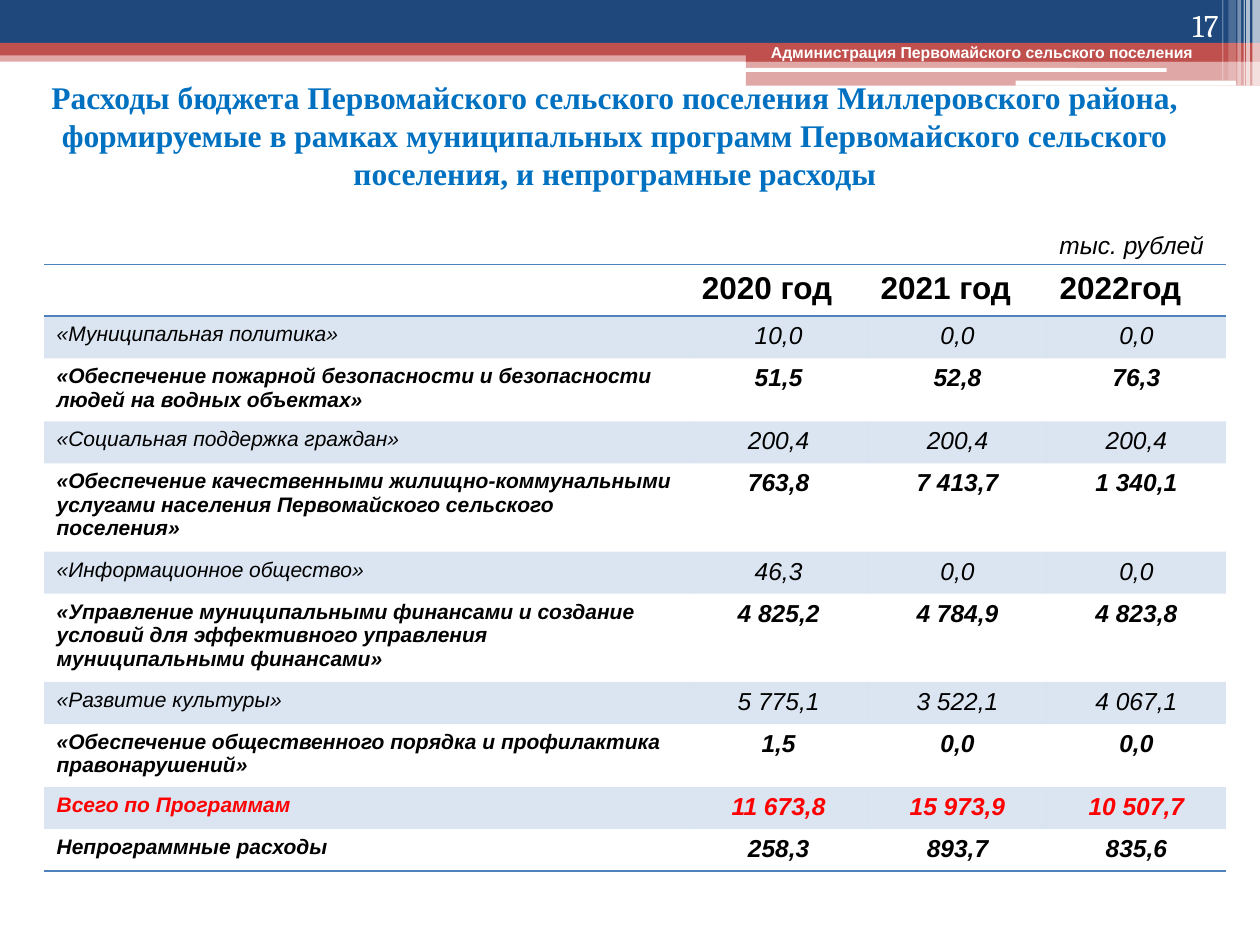
"""Build the budget expenditure slide with its programme table."""
from pptx import Presentation
from pptx.dml.color import RGBColor
from pptx.enum.shapes import MSO_SHAPE
from pptx.enum.text import MSO_ANCHOR, PP_ALIGN
from pptx.oxml import parse_xml
from pptx.oxml.ns import nsdecls, qn
from pptx.util import Inches, Pt

RECT, ROUND = MSO_SHAPE.RECTANGLE, MSO_SHAPE.ROUNDED_RECTANGLE
LEFT, CENTER, RIGHT = PP_ALIGN.LEFT, PP_ALIGN.CENTER, PP_ALIGN.RIGHT
TOP, BOTTOM = MSO_ANCHOR.TOP, MSO_ANCHOR.BOTTOM
NAVY, RED, BLUE, WHITE, BLACK = "1F497D", "C0504D", "4F81BD", "FFFFFF", "000000"
NO_STYLE = "{2D5ABB26-0587-4C30-8999-92F81FD0307C}"

TITLE = ("Расходы бюджета Первомайского сельского поселения Миллеровского района, "
         "формируемые в рамках муниципальных программ Первомайского сельского "
         "поселения, и непрограмные расходы")
BANDS = [
    (RECT, 0, 0.4, 10, 0.09, RED, 50),
    (RECT, 0, 0, 10, 0.34, NAVY, 100),
    (RECT, 0, 0.34, 10, 0.1, RED, 100),
    (RECT, 5.92, 0.39, 4.08, 0.1, RED, 100),
    (RECT, 5.92, 0.48, 4.08, 0.2, RED, 50),
    (ROUND, 5.91, 0.54, 3.35, 0.03, WHITE, 100),
    (ROUND, 8.06, 0.64, 1.75, 0.04, WHITE, 100),
    (RECT, 9.94, 0, 0.06, 0.68, WHITE, 65),
    (RECT, 9.89, 0, 0.03, 0.68, WHITE, 65),
    (RECT, 9.87, 0, 0.01, 0.68, WHITE, 60),
    (RECT, 9.82, 0, 0.03, 0.68, WHITE, 40),
    (RECT, 9.75, 0, 0.06, 0.64, WHITE, 20),
    (RECT, 9.7, 0, 0.01, 0.64, WHITE, 30),
]
LABELS = [
    ("Администрация Первомайского сельского поселения", (6.02, 0.29, 3.66, 0.4),
     TOP, LEFT, dict(size=9, color=WHITE, bold=True)),
    ("17", (8.94, 0, 0.83, 0.4), BOTTOM, RIGHT,
     dict(size=18, color=WHITE, name="Cambria")),
    ("тыс. рублей", (8.31, 1.78, 1.42, 0.34), TOP, LEFT,
     dict(size=14, italic=True)),
]
COL_WIDTHS = [5.12, 1.42, 1.42, 1.42]
HEADER = ["", "2020 год", "2021 год", "2022год"]
HEADER_HEIGHT, MIN_ROW_HEIGHT, TABLE_HEIGHT = 0.41, 0.16, 4.81
TOTAL = "Всего по Программам"
ROWS = [
    ("«Муниципальная политика»", "10,0", "0,0", "0,0"),
    ("«Обеспечение пожарной безопасности и безопасности людей на водных объектах»",
     "51,5", "52,8", "76,3"),
    ("«Социальная поддержка граждан»", "200,4", "200,4", "200,4"),
    ("«Обеспечение качественными жилищно-коммунальными услугами населения "
     "Первомайского сельского поселения»", "763,8", "7 413,7", "1 340,1"),
    ("«Информационное общество»", "46,3", "0,0", "0,0"),
    ("«Управление муниципальными финансами и создание условий для эффективного "
     "управления муниципальными финансами»", "4 825,2", "4 784,9", "4 823,8"),
    ("«Развитие культуры»", "5 775,1", "3 522,1", "4 067,1"),
    ("«Обеспечение общественного порядка и профилактика правонарушений»",
     "1,5", "0,0", "0,0"),
    (TOTAL, "11 673,8", "15 973,9", "10 507,7"),
    ("Непрограммные расходы", "258,3", "893,7", "835,6"),
]


def paint(fill, color, opacity=100):
    fill.solid()
    fill.fore_color.rgb = RGBColor.from_string(color)
    if opacity < 100:
        clr = fill._xPr.find(qn("a:solidFill"))[0]
        clr.append(parse_xml(f'<a:alpha {nsdecls("a")} val="{opacity * 1000}"/>'))


def write(tf, text, align, size, color=BLACK, bold=False, italic=False, name="Arial"):
    p = tf.paragraphs[0]
    p.text, p.alignment = text, align
    font = p.font
    font.name, font.size, font.bold, font.italic = name, Pt(size), bold, italic
    font.color.rgb = RGBColor.from_string(color)


def add_borders(cell, *sides):
    for i, side in enumerate(sides):
        cell._tc.get_or_add_tcPr().insert(i, parse_xml(
            f'<a:{side} {nsdecls("a")} w="12700"><a:solidFill>'
            f'<a:srgbClr val="{BLUE}"/></a:solidFill></a:{side}>'))


def add_table(s):
    heights = [HEADER_HEIGHT] + [MIN_ROW_HEIGHT] * len(ROWS)
    frame = s.shapes.add_table(len(heights), len(COL_WIDTHS), Inches(0.35), Inches(2.1),
                               Inches(sum(COL_WIDTHS)), Inches(TABLE_HEIGHT))
    table = frame.table
    table._tbl.tblPr.find(qn("a:tableStyleId")).text = NO_STYLE
    for column, width in zip(table.columns, COL_WIDTHS):
        column.width = Inches(width)
    for row, height in zip(table.rows, heights):
        row.height = Inches(height)
    frame.height = Inches(TABLE_HEIGHT)
    for c, text in enumerate(HEADER):
        cell = table.cell(0, c)
        write(cell.text_frame, text, LEFT, 18, bold=True)
        cell.fill.background()
        add_borders(cell, "lnT", "lnB")
    for r, values in enumerate(ROWS, 1):
        total, banded = values[0] == TOTAL, r % 2 == 1
        for c, text in enumerate(values):
            cell = table.cell(r, c)
            write(cell.text_frame, text, CENTER if c else LEFT, 14 if c else 12,
                  "FF0000" if total else BLACK, bold=total or not banded, italic=True)
            if banded:
                paint(cell.fill, BLUE, 20)
            else:
                cell.fill.background()
            if r == len(ROWS):
                add_borders(cell, "lnB")


def main():
    prs = Presentation()
    prs.slide_width, prs.slide_height = Inches(10), Inches(7.5)
    s = prs.slides.add_slide(prs.slide_layouts[5])
    for shape, *box, color, opacity in BANDS:
        sp = s.shapes.add_shape(shape, *map(Inches, box))
        sp.shadow.inherit = False
        sp.line.fill.background()
        paint(sp.fill, color, opacity)

    title = s.shapes.title
    title.left, title.top, title.width, title.height = map(Inches, (0, 0.6, 9.76, 1.26))
    tf = title.text_frame
    tf.word_wrap, tf.vertical_anchor, tf.margin_top = True, TOP, Inches(0.02)
    write(tf, TITLE, CENTER, 18, "0070C0", True, name="Times New Roman")

    for text, box, anchor, align, style in LABELS:
        tf = s.shapes.add_textbox(*map(Inches, box)).text_frame
        tf.word_wrap, tf.vertical_anchor = True, anchor
        write(tf, text, align, **style)
    add_table(s)
    prs.save("out.pptx")


if __name__ == "__main__":
    main()
